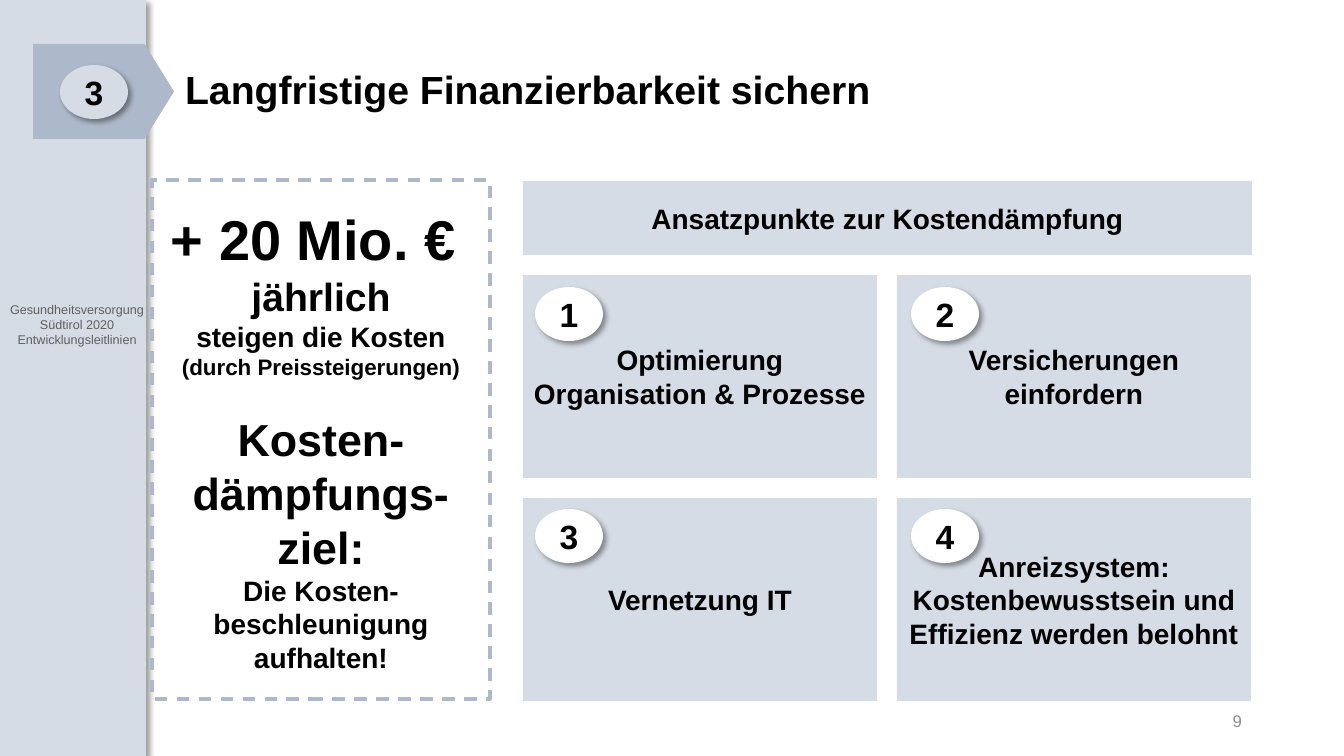
import lxml.etree
import pptx
import pptx.dml.color
import pptx.enum.dml
import pptx.enum.shapes
import pptx.enum.text
import pptx.oxml.ns
import pptx.util

SHAPE = pptx.enum.shapes.MSO_SHAPE
ALIGN = pptx.enum.text.PP_ALIGN
ANCHOR = pptx.enum.text.MSO_ANCHOR


def px(n):
    return pptx.util.Emu(round(n * 914400 / 100.8))


def rgb(value):
    return pptx.dml.color.RGBColor.from_string(value)


class Deck:
    font = "Arial"
    ink = "000000"
    muted = "5F5F5F"
    number = "8C8C8C"
    pale = "D6DCE5"
    accent = "ADB9CA"
    white = "FFFFFF"

    def __init__(self, width, height):
        self.prs = pptx.Presentation()
        self.prs.slide_width, self.prs.slide_height = px(width), px(height)
        self.s = self.prs.slides.add_slide(self.prs.slide_layouts[5])

    def set_lines(self, sp, lines, align=ALIGN.CENTER, anchor=ANCHOR.MIDDLE, color=ink, bold=True):
        tf = sp.text_frame
        tf.word_wrap = True
        tf.auto_size = pptx.enum.text.MSO_AUTO_SIZE.NONE
        tf.vertical_anchor = anchor
        tf.text = "\n".join(text for text, size, before in lines)
        for p, (text, size, before) in zip(tf.paragraphs, lines):
            p.alignment = align
            p.space_before = pptx.util.Pt(before)
            for r in p.runs:
                r.font.name = self.font
                r.font.size = pptx.util.Pt(size)
                r.font.bold = bold
                r.font.color.rgb = rgb(color)

    def title(self, text, x, y, w, h):
        sp = self.s.shapes.title
        sp.left, sp.top, sp.width, sp.height = map(px, (x, y, w, h))
        self.set_lines(sp, [(text, 28, 0)], ALIGN.LEFT)
        sp.text_frame.paragraphs[0].line_spacing = 0.9

    def text(self, lines, x, y, w, h, **style):
        sp = self.s.shapes.add_textbox(*map(px, (x, y, w, h)))
        self.set_lines(sp, lines, bold=False, **style)

    def shape(self, kind, x, y, w, h, fill=None, lines=()):
        sp = self.s.shapes.add_shape(kind, *map(px, (x, y, w, h)))
        sp.shadow.inherit = False
        sp.line.fill.background()
        if fill:
            sp.fill.solid()
            sp.fill.fore_color.rgb = rgb(fill)
        else:
            sp.fill.background()
        if lines:
            self.set_lines(sp, lines)
        return sp

    def cast_shadow(self, sp):
        effects = sp._element.spPr.find(pptx.oxml.ns.qn("a:effectLst"))
        shadow = lxml.etree.SubElement(
            effects, pptx.oxml.ns.qn("a:outerShdw"),
            blurRad="50800", dist="38100", dir="2700000", algn="tl", rotWithShape="0")
        color = lxml.etree.SubElement(shadow, pptx.oxml.ns.qn("a:srgbClr"), val=self.ink)
        lxml.etree.SubElement(color, pptx.oxml.ns.qn("a:alpha"), val="40000")

    def sidebar(self, w, h):
        self.cast_shadow(self.shape(SHAPE.RECTANGLE, 0, 0, w, h, self.pale))

    def badge(self, label, x, y, fill):
        self.cast_shadow(self.shape(SHAPE.OVAL, x, y, 68, 54, fill, [(label, 24, 0)]))

    def pentagon(self, x, y, w, h):
        sp = self.shape(SHAPE.PENTAGON, x, y, w, h, self.accent)
        sp.adjustments[0] = 0.31

    def panel(self, text, x, y, w, h):
        lines = [(line, 20, 0) for line in text.split("\n")]
        self.shape(SHAPE.RECTANGLE, x, y, w, h, self.pale, lines)

    def dashed_box(self, lines, x, y, w, h):
        sp = self.shape(SHAPE.RECTANGLE, x, y, w, h, None, lines)
        sp.line.color.rgb = rgb(self.accent)
        sp.line.width = pptx.util.Pt(2.25)
        sp.line.dash_style = pptx.enum.dml.MSO_LINE.DASH


def main():
    deck = Deck(1344, 756)
    deck.sidebar(146, 756)
    deck.text([("Gesundheitsversorgung Südtirol 2020", 9, 0), ("Entwicklungsleitlinien", 9, 0)],
              0, 297, 154, 71, anchor=ANCHOR.TOP, color=deck.muted)
    deck.text([("9", 12, 0)], 950, 701, 302, 40, align=ALIGN.RIGHT, color=deck.number)
    deck.title("Langfristige Finanzierbarkeit sichern", 175, 40, 1077, 104)
    deck.pentagon(33, 44, 141, 95)
    deck.badge("3", 60, 65, deck.pale)

    deck.dashed_box([
        ("+ 20 Mio. € ", 40, 0),
        ("jährlich", 28, 0),
        ("steigen die Kosten", 20, 0),
        ("(durch Preissteigerungen)", 16, 0),
        ("Kosten-dämpfungs-ziel:", 32, 23),
        ("Die Kosten-beschleunigung aufhalten!", 20, 0),
    ], 152, 180, 338, 519)

    deck.panel("Ansatzpunkte zur Kostendämpfung", 523, 181, 729, 74)
    measures = [
        "Optimierung Organisation & Prozesse",
        "Versicherungen\neinfordern",
        "Vernetzung IT",
        "Anreizsystem:\nKostenbewusstsein und Effizienz werden belohnt",
    ]
    for i, measure in enumerate(measures):
        row, col = divmod(i, 2)
        deck.panel(measure, 523 + 374 * col, 275 + 223 * row, 354, 203)
        deck.badge(str(i + 1), 535 + 376 * col, 287 + 222 * row, deck.white)

    deck.prs.save("out.pptx")


if __name__ == "__main__":
    main()
